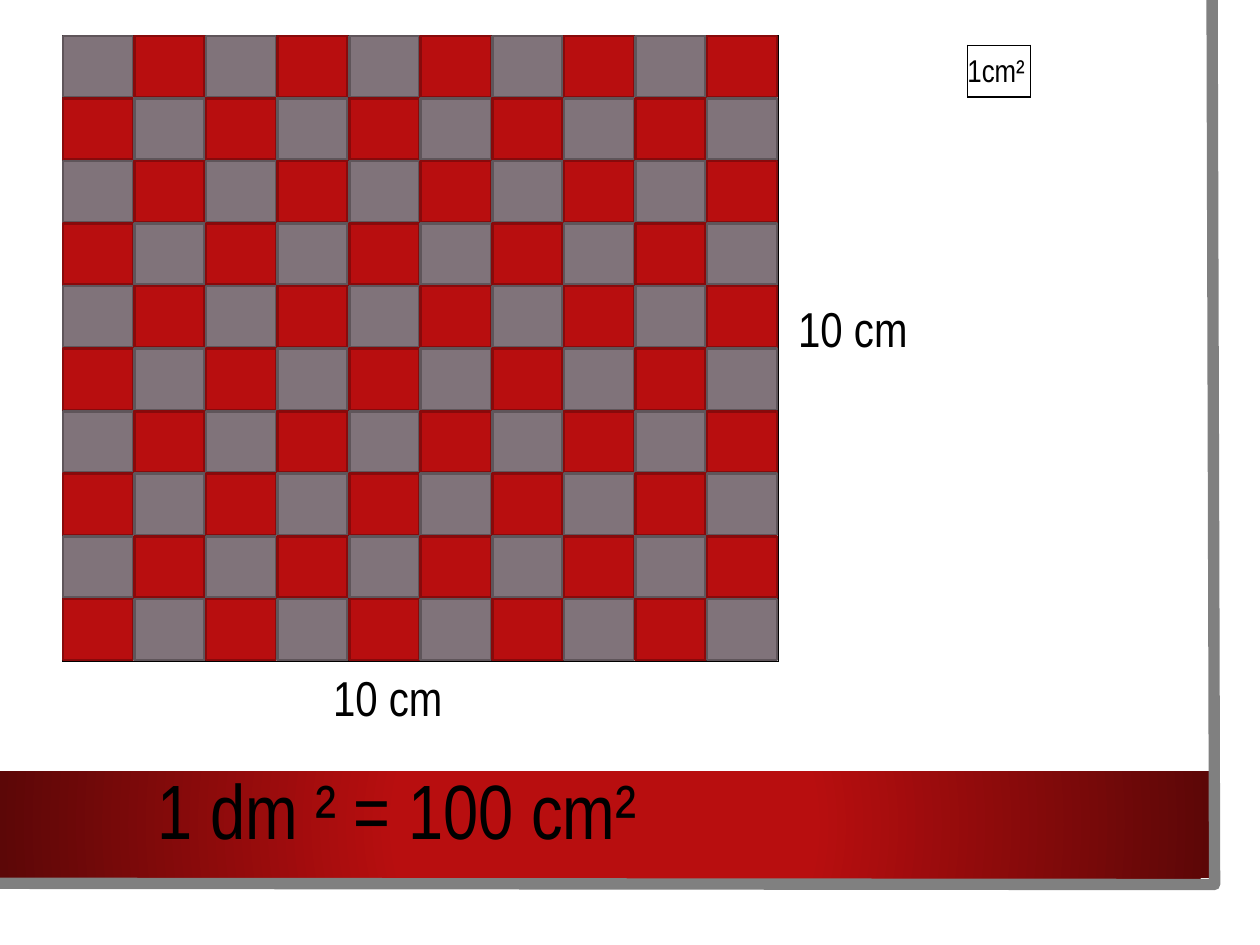
from dataclasses import dataclass
from itertools import product

from lxml.etree import SubElement
from pptx import Presentation
from pptx.dml.color import RGBColor
from pptx.enum.shapes import MSO_SHAPE
from pptx.enum.text import MSO_AUTO_SIZE
from pptx.oxml import parse_xml
from pptx.oxml.ns import nsdecls, qn
from pptx.util import Inches, Pt


@dataclass(frozen=True)
class Theme:
    """Colours, type sizes and line widths of the slide."""
    font: str = "Arial Narrow"
    ink: str = "000000"
    red: str = "B80E0F"
    red_edge: str = "880A0B"
    red_dark: str = "5C0707"
    grey: str = "80737A"
    grey_edge: str = "5F555A"
    frame: str = "808080"
    unit_size: int = 18
    side_size: int = 28
    formula_size: int = 44
    border: float = 1
    tile_edge: float = 1.5
    frame_edge: float = 6.5


@dataclass(frozen=True)
class Box:
    """A region in percent of the slide's width and height."""
    x: float
    y: float
    w: float
    h: float

    def emu(self):
        """Return left, top, width and height as lengths."""
        return (*place(self.x, self.y), *place(self.w, self.h))

    def within(self, x, y, w, h):
        """Return a region given in shares of this one."""
        return Box(self.x + x * self.w, self.y + y * self.h, w * self.w, h * self.h)


T = Theme()
WIDTH, HEIGHT = Inches(10), Inches(7.5)


def place(x, y):
    """Turn percentages of the slide into a pair of lengths."""
    return int(WIDTH * x / 100), int(HEIGHT * y / 100)


def rgb(colour):
    """Read a hex colour."""
    return RGBColor.from_string(colour)


def add_label(s, box, text, size):
    """Place one line of text in the box."""
    tf = s.shapes.add_textbox(*box.emu()).text_frame
    tf.word_wrap = False
    tf.auto_size = MSO_AUTO_SIZE.SHAPE_TO_FIT_TEXT
    p = tf.paragraphs[0]
    p.text = text
    p.font.name, p.font.size, p.font.color.rgb = T.font, Pt(size), rgb(T.ink)


def add_grid(s, box, n):
    """Draw an n by n table with black borders and no fill."""
    table = s.shapes.add_table(n, n, *box.emu()).table
    table.first_row = table.horz_banding = False
    for cell in table.iter_cells():
        tcPr = cell._tc.get_or_add_tcPr()
        for side in ("lnL", "lnR", "lnT", "lnB"):
            ln = SubElement(tcPr, qn(f"a:{side}"), w=str(Pt(T.border)))
            SubElement(SubElement(ln, qn("a:solidFill")), qn("a:srgbClr"), val=T.ink)
        cell.fill.background()


def add_tile(s, box, fill, edge):
    """Draw one square of the checkerboard."""
    sp = s.shapes.add_shape(MSO_SHAPE.RECTANGLE, *box.emu())
    sp.shadow.inherit = False
    sp.fill.solid()
    sp.fill.fore_color.rgb = rgb(fill)
    sp.line.color.rgb, sp.line.width = rgb(edge), Pt(T.tile_edge)


def add_board(s, box, n=10):
    """Cover an n by n grid with alternating grey and red tiles."""
    add_grid(s, box, n)
    colours = ((T.grey, T.grey_edge), (T.red, T.red_edge))
    for row, col in product(range(n), repeat=2):
        tile = box.within(col / n, row / n, 0.98 / n, 0.98 / n)
        add_tile(s, tile, *colours[(row + col) % 2])


def add_unit(s, box):
    """Show a single square centimetre with its label."""
    add_grid(s, box, 1)
    add_label(s, box.within(-0.2, 0, 1.44, 1), "1cm²", T.unit_size)


def add_banner(s, box):
    """Draw the red band and the formula on it."""
    sp = s.shapes.add_shape(MSO_SHAPE.RECTANGLE, *box.emu())
    sp.shadow.inherit = False
    sp.line.fill.background()
    sp.fill.gradient()
    for stop, colour, position in zip(sp.fill.gradient_stops, (T.red, T.red_dark), (0.34, 1)):
        stop.color.rgb, stop.position = rgb(colour), position
    lin = sp._element.spPr.find(qn("a:gradFill")).find(qn("a:lin"))
    lin.getparent().replace(lin, parse_xml(
        f'<a:path {nsdecls("a")} path="circle">'
        '<a:fillToRect l="50000" t="50000" r="50000" b="50000"/></a:path>'))
    add_label(s, box.within(0.12, -0.14, 0.46, 1), "1 dm ² = 100 cm²", T.formula_size)


def add_frame(s, box):
    """Run a grey line down the right side and along the bottom."""
    right, bottom = box.x + box.w, box.y + box.h
    builder = s.shapes.build_freeform(*place(right - 0.2, box.y))
    builder.add_line_segments([place(right, bottom), place(box.x, bottom - 0.13)], close=False)
    sp = builder.convert_to_shape()
    sp.shadow.inherit = False
    sp.fill.background()
    sp.line.color.rgb, sp.line.width = rgb(T.frame), Pt(T.frame_edge)


def main():
    """Build the slide and save it."""
    prs = Presentation()
    prs.slide_width, prs.slide_height = WIDTH, HEIGHT
    s = prs.slides.add_slide(prs.slide_layouts[6])
    board = Box(5, 3.8, 56.8, 66.2)
    add_banner(s, Box(0, 81.6, 96, 11.33))
    add_frame(s, Box(0, 0, 96.4, 93.6))
    add_board(s, board)
    add_unit(s, Box(76.8, 4.8, 5, 5.47))
    add_label(s, board.within(0.36, 1, 0.22, 0.12), "10 cm", T.side_size)
    add_label(s, board.within(1.01, 0.41, 0.21, 0.12), "10 cm", T.side_size)
    prs.save("out.pptx")


if __name__ == "__main__":
    main()
